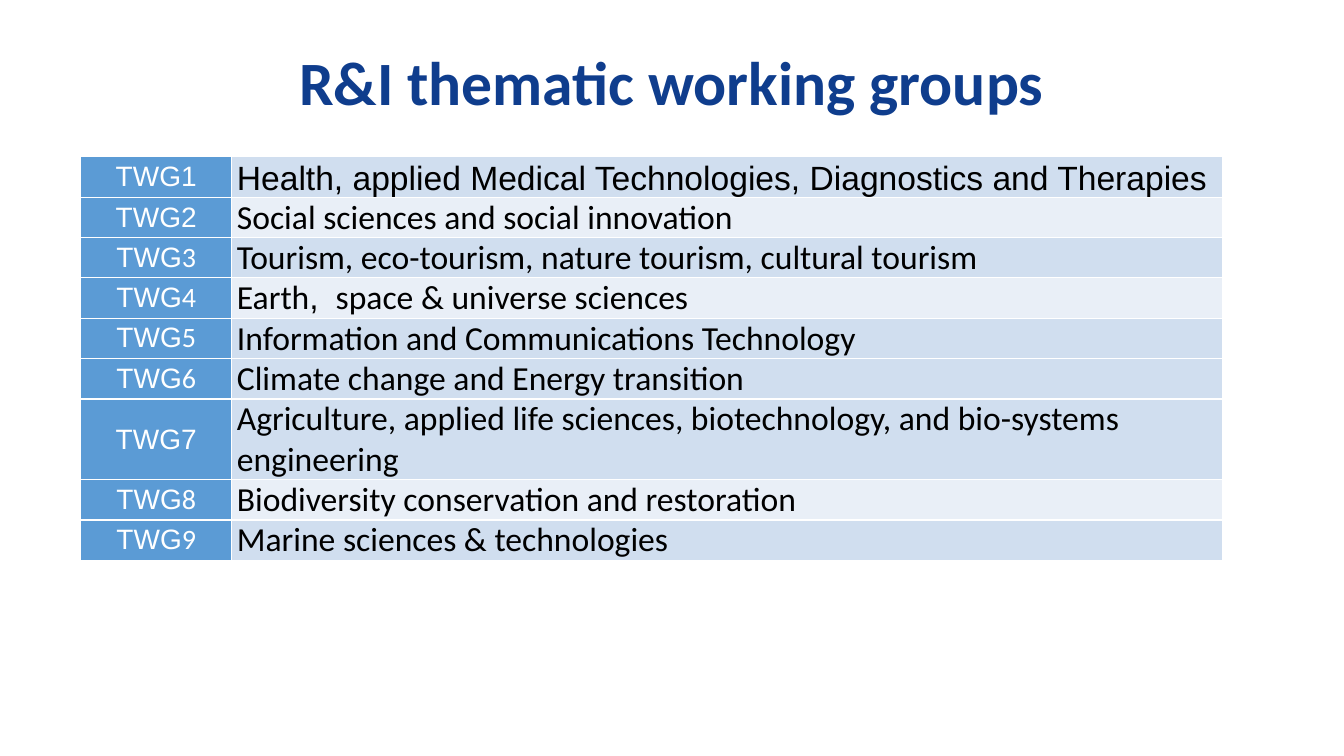
from dataclasses import dataclass

from lxml.etree import SubElement
from pptx import Presentation
from pptx.dml.color import RGBColor
from pptx.enum.text import MSO_ANCHOR, PP_ALIGN
from pptx.oxml.ns import qn
from pptx.util import Pt


@dataclass(frozen=True)
class Theme:
    navy: str = "0F3D8D"
    blue: str = "5B9BD5"
    band: str = "D0DEEF"
    pale: str = "E9EFF7"
    white: str = "FFFFFF"
    black: str = "000000"
    sans: str = "Calibri"
    plain: str = "Arial"
    head: int = 44
    body: int = 24
    code: int = 20


THEME = Theme()

# Each group: code runs, name runs, row fill; a run is (text, font)
P, S = THEME.plain, THEME.sans
GROUPS = [
    ([("TWG1", P)],
     [("Health, applied Medical Technologies, Diagnostics and Therapies", P)],
     THEME.band),
    ([("TWG2", P)], [("Social sciences and social innovation", S)], THEME.pale),
    ([("TWG", P), ("3", S)],
     [("Tourism, eco-tourism, nature tourism, cultural tourism", S)],
     THEME.band),
    ([("TWG", P), ("4", S)],
     [("Earth", S), (", ", P), (" space & universe sciences", S)], THEME.pale),
    ([("TWG", P), ("5", S)],
     [("Information and Communications Technology", S)], THEME.band),
    ([("TWG", P), ("6", S)],
     [("Climate change and Energy transition", S)], THEME.band),
    ([("TWG7", P)],
     [("Agriculture, applied life sciences, biotechnology, "
       "and bio-systems engineering", S)], THEME.band),
    ([("TWG", P), ("8", S)],
     [("Biodiversity conservation and restoration", S)], THEME.pale),
    ([("TWG", P), ("9", S)],
     [("Marine sciences & technologies", S)], THEME.band),
]


def write(frame, runs, *, size, color, bold=False, align=PP_ALIGN.LEFT,
          space=None):
    para = frame.paragraphs[0]
    para.alignment = align
    para.line_spacing = space
    for text, face in runs:
        run = para.add_run()
        run.text = text
        font = run.font
        font.name, font.size, font.bold = face, Pt(size), bold
        font.color.rgb = RGBColor.from_string(color)


def title(slide, left, top, width, height):
    frame = slide.shapes.add_textbox(
        Pt(left), Pt(top), Pt(width), Pt(height)).text_frame
    frame.word_wrap = True
    frame.vertical_anchor = MSO_ANCHOR.MIDDLE
    write(frame, [("R&I thematic working groups", THEME.sans)],
          size=THEME.head, color=THEME.navy, bold=True,
          align=PP_ALIGN.CENTER, space=0.9)


def style(cell, fill, anchor):
    cell.margin_left = cell.margin_right = Pt(3.6)
    cell.margin_top = cell.margin_bottom = 0
    cell.vertical_anchor = anchor
    # Borders come before the fill in the cell properties
    props = cell._tc.get_or_add_tcPr()
    for side in ("a:lnL", "a:lnR", "a:lnT", "a:lnB"):
        line = SubElement(props, qn(side), w=str(Pt(1)))
        paint = SubElement(line, qn("a:solidFill"))
        SubElement(paint, qn("a:srgbClr"), val=THEME.white)
    cell.fill.solid()
    cell.fill.fore_color.rgb = RGBColor.from_string(fill)


def groups(slide, left, top, width, height):
    table = slide.shapes.add_table(
        len(GROUPS), 2, Pt(left), Pt(top), Pt(width), Pt(height)).table
    table.first_row = table.horz_banding = False
    first = 108
    table.columns[0].width = Pt(first)
    table.columns[1].width = Pt(width - first)
    for row, (code, name, fill) in enumerate(GROUPS):
        # Rows grow to fit their text
        table.rows[row].height = Pt(height / len(GROUPS))
        left_cell, right_cell = table.cell(row, 0), table.cell(row, 1)
        style(left_cell, THEME.blue, MSO_ANCHOR.MIDDLE)
        write(left_cell.text_frame, code, size=THEME.code,
              color=THEME.white, align=PP_ALIGN.CENTER)
        style(right_cell, fill, MSO_ANCHOR.BOTTOM)
        write(right_cell.text_frame, name, size=THEME.body,
              color=THEME.black)


def main():
    deck = Presentation()
    deck.slide_width, deck.slide_height = Pt(960), Pt(540)
    slide = deck.slides.add_slide(deck.slide_layouts[6])
    title(slide, 66, 20, 828, 82)
    groups(slide, 57.6, 112, 815.76, 144)
    deck.save("out.pptx")


if __name__ == "__main__":
    main()
